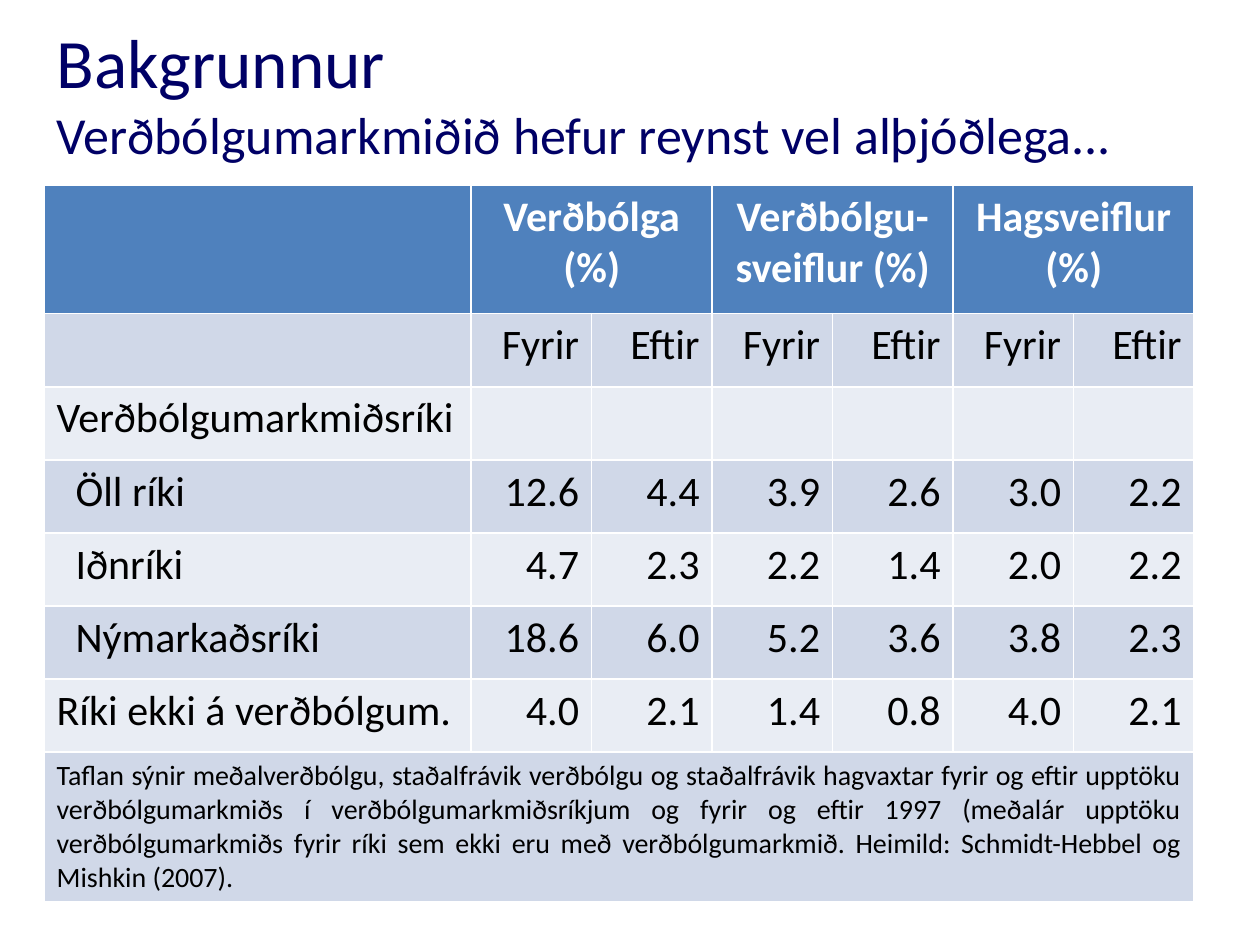
import pptx
import pptx.dml.color
import pptx.enum.text
import pptx.util
from dataclasses import dataclass

Inches = pptx.util.Inches
Align = pptx.enum.text.PP_ALIGN


@dataclass(frozen=True)
class Theme:
    face: str = "Calibri"
    navy: str = "000066"
    head: str = "4F81BD"
    bands: tuple = ("D0D8E8", "E9EDF4")
    white: str = "FFFFFF"
    black: str = "000000"
    title: float = 39.6
    sub: float = 29.7
    body: float = 24
    note: float = 16


THEME = Theme()

GROUPS = ["Verðbólga\n(%)", "Verðbólgu-sveiflur (%)", "Hagsveiflur (%)"]
ROWS = [
    ["", *["Fyrir", "Eftir"] * len(GROUPS)],
    ["Verðbólgumarkmiðsríki", *[""] * 6],
    ["Öll ríki", "12.6", "4.4", "3.9", "2.6", "3.0", "2.2"],
    ["Iðnríki", "4.7", "2.3", "2.2", "1.4", "2.0", "2.2"],
    ["Nýmarkaðsríki", "18.6", "6.0", "5.2", "3.6", "3.8", "2.3"],
    ["Ríki ekki á verðbólgum.", "4.0", "2.1", "1.4", "0.8", "4.0", "2.1"],
]
NESTED = {"Öll ríki", "Iðnríki", "Nýmarkaðsríki"}
NOTE = (
    "Taflan sýnir meðalverðbólgu, staðalfrávik verðbólgu og staðalfrávik "
    "hagvaxtar fyrir og eftir upptöku verðbólgumarkmiðs í "
    "verðbólgumarkmiðsríkjum og fyrir og eftir 1997 (meðalár upptöku "
    "verðbólgumarkmiðs fyrir ríki sem ekki eru með verðbólgumarkmið. "
    "Heimild: Schmidt-Hebbel og Mishkin (2007)."
)


def style(font, size, color, bold=False):
    font.name = THEME.face
    font.size = pptx.util.Pt(size)
    font.bold = bold
    font.color.rgb = pptx.dml.color.RGBColor.from_string(color)


def write(cell, text, align, size=THEME.body, color=THEME.black, bold=False):
    cell.text = text
    for para in cell.text_frame.paragraphs:
        para.alignment = align
        style(para.font, size, color, bold)


def paint(row, color):
    for cell in row.cells:
        cell.fill.solid()
        cell.fill.fore_color.rgb = pptx.dml.color.RGBColor.from_string(color)


def add_title(slide, left, top, width, height):
    frame = slide.shapes.add_textbox(left, top, width, height).text_frame
    frame.word_wrap = True
    frame.vertical_anchor = pptx.enum.text.MSO_ANCHOR.MIDDLE
    para = frame.paragraphs[0]
    run = para.add_run()
    run.text = "Bakgrunnur"
    style(run.font, THEME.title, THEME.navy)
    para.add_line_break()
    run = para.add_run()
    run.text = "Verðbólgumarkmiðið hefur reynst vel alþjóðlega..."
    style(run.font, THEME.sub, THEME.navy)


def add_grid(slide, left, top, width, height):
    count = len(ROWS[0])
    last = len(ROWS) + 1
    table = slide.shapes.add_table(
        last + 1, count, left, top, width, height).table

    first = Inches(3.39)
    for index, col in enumerate(table.columns):
        col.width = first if index == 0 else (width - first) // (count - 1)
    tall, line = Inches(1.02), Inches(0.58)
    for index, row in enumerate(table.rows):
        row.height = line
        paint(row, THEME.bands[(index - 1) % 2] if index else THEME.head)
    table.rows[0].height = tall
    table.rows[last].height = height - tall - line * len(ROWS)

    for index, text in enumerate(GROUPS):
        start = 1 + 2 * index
        cell = table.cell(0, start)
        cell.merge(table.cell(0, start + 1))
        write(cell, text, Align.CENTER, color=THEME.white, bold=True)

    for r, texts in enumerate(ROWS, 1):
        for c, text in enumerate(texts):
            if text:
                cell = table.cell(r, c)
                write(cell, text, Align.RIGHT if c else Align.LEFT)
                if text in NESTED:
                    cell.margin_left = Inches(0.25)

    cell = table.cell(last, 0)
    cell.merge(table.cell(last, count - 1))
    write(cell, NOTE, Align.JUSTIFY, THEME.note)


def main():
    deck = pptx.Presentation()
    deck.slide_width, deck.slide_height = Inches(10), Inches(7.5)
    slide = deck.slides.add_slide(deck.slide_layouts[6])
    add_grid(slide, Inches(0.35), Inches(1.47), Inches(9.13), Inches(5.69))
    add_title(slide, Inches(0.35), Inches(0.07), Inches(8.66), Inches(1.32))
    deck.save("out.pptx")


if __name__ == "__main__":
    main()
